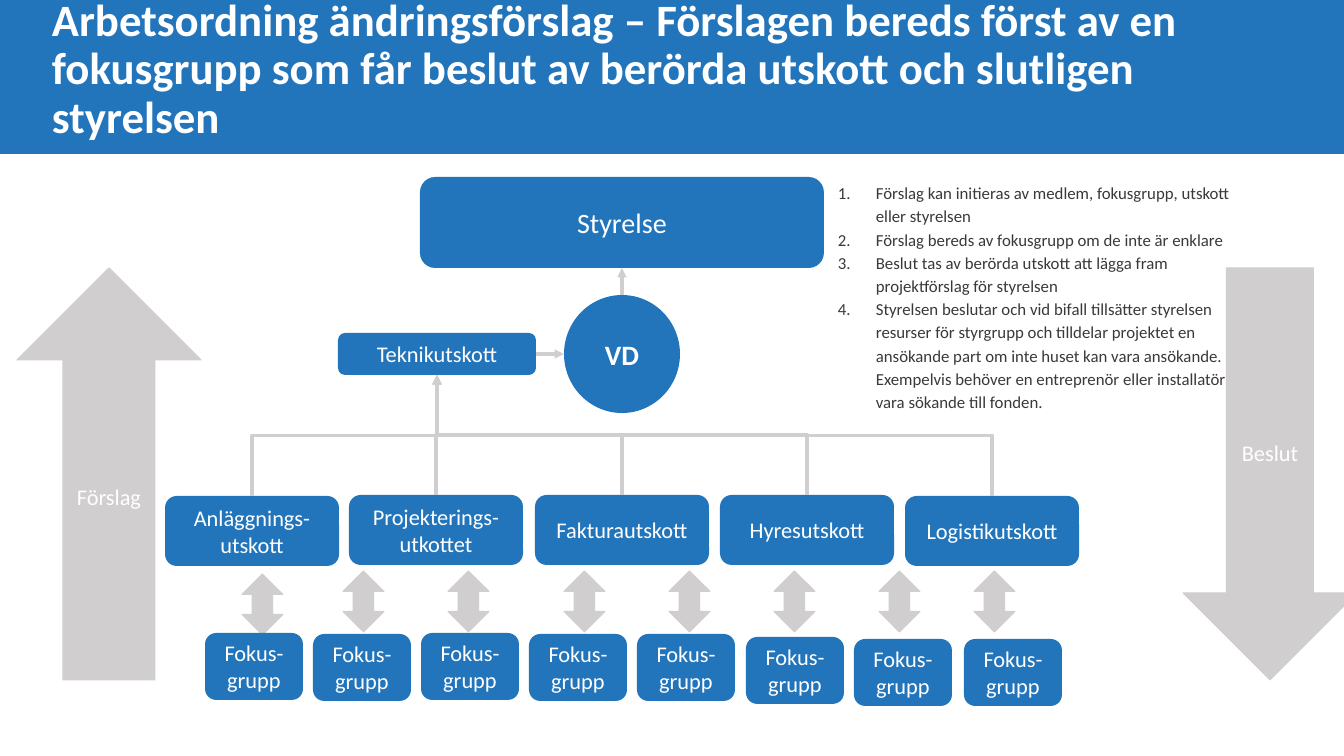
from lxml.etree import SubElement
from pptx import Presentation
from pptx.dml.color import RGBColor
from pptx.enum.shapes import MSO_CONNECTOR, MSO_SHAPE
from pptx.enum.text import MSO_ANCHOR, MSO_AUTO_SIZE, PP_ALIGN
from pptx.oxml.ns import qn
from pptx.util import Pt

EMU_PER_PX = 12192000 / 1344
BLUE = RGBColor(0x23, 0x75, 0xBB)
GREY = RGBColor(0xD0, 0xCE, 0xCE)
DARK = RGBColor(0x3B, 0x38, 0x38)
WHITE = RGBColor(0xFF, 0xFF, 0xFF)
FONT = "Calibri"

TITLE = ("Arbetsordning ändringsförslag – Förslagen bereds först av en "
         "fokusgrupp som får beslut av berörda utskott och slutligen styrelsen")
STEPS = [
    "Förslag kan initieras av medlem, fokusgrupp, utskott eller styrelsen",
    "Förslag bereds av fokusgrupp om de inte är enklare",
    "Beslut tas av berörda utskott att lägga fram projektförslag för styrelsen",
    "Styrelsen beslutar och vid bifall tillsätter styrelsen resurser för "
    "styrgrupp och tilldelar projektet en ansökande part om inte huset kan "
    "vara ansökande. Exempelvis behöver en entreprenör eller installatör "
    "vara sökande till fonden.",
]
COMMITTEES = [
    ("Anläggnings-utskott", 165, 496),
    ("Projekterings-utkottet", 349, 495),
    ("Fakturautskott", 535, 495),
    ("Hyresutskott", 720, 495),
    ("Logistikutskott", 905, 496),
]
FOCUS_GROUPS = [(205, 633), (313, 634), (421, 633), (529, 634),
                (637, 634), (746, 637), (854, 639), (964, 639)]
EXCHANGES = [(242, 574), (343, 571), (448, 571), (564, 571),
             (669, 571), (774, 571), (879, 571), (974, 571)]


def px(n):
    return round(n * EMU_PER_PX)


def style_runs(p, size, color, bold=False):
    for r in p.runs:
        r.font.name = FONT
        r.font.size = Pt(size)
        r.font.bold = bold
        r.font.color.rgb = color


def add_block(s, kind, x, y, w, h, fill, text="", size=16, bold=False):
    sp = s.shapes.add_shape(kind, px(x), px(y), px(w), px(h))
    sp.shadow.inherit = False
    sp.fill.solid()
    sp.fill.fore_color.rgb = fill
    if fill == GREY:
        sp.line.color.rgb = GREY
        sp.line.width = Pt(0.75)
    else:
        sp.line.fill.background()
    if text:
        tf = sp.text_frame
        tf.word_wrap = True
        tf.vertical_anchor = MSO_ANCHOR.MIDDLE
        tf.margin_left = tf.margin_right = px(13)
        tf.margin_top = tf.margin_bottom = px(13)
        p = tf.paragraphs[0]
        p.text = text
        p.alignment = PP_ALIGN.CENTER
        style_runs(p, size, WHITE, bold)
    return sp


def add_box(s, text, x, y, w, h, size=16):
    return add_block(s, MSO_SHAPE.ROUNDED_RECTANGLE, x, y, w, h, BLUE, text, size)


def add_arrow(s, kind, x1, y1, x2, y2):
    cxn = s.shapes.add_connector(kind, x1, y1, x2, y2)
    cxn.line.color.rgb = GREY
    cxn.line.width = Pt(2.25)
    SubElement(cxn.line._get_or_add_ln(), qn("a:tailEnd"), type="triangle")
    SubElement(cxn._element.spPr, qn("a:effectLst"))
    return cxn


def add_upward_elbow(s, lower, upper):
    x1, y1 = lower.left + lower.width // 2, lower.top
    x2, y2 = upper.left + upper.width // 2, upper.top + upper.height
    cxn = add_arrow(s, MSO_CONNECTOR.ELBOW, x1, y1, x2, y2)
    cxn.begin_connect(lower, 0)
    cxn.end_connect(upper, 2)
    rise, run = y1 - y2, abs(x2 - x1)
    xfrm = cxn._element.spPr.find(qn("a:xfrm"))
    xfrm.set("rot", "16200000")
    xfrm.set("flipH", "0")
    xfrm.set("flipV", "1" if x2 < x1 else "0")
    cxn.left, cxn.top = (x1 + x2 - rise) // 2, (y1 + y2 - run) // 2
    cxn.width, cxn.height = rise, run


def add_title(s):
    add_block(s, MSO_SHAPE.RECTANGLE, 0, 0, 1344, 154, BLUE)
    title = s.shapes.title
    s.shapes._spTree.append(title._element)
    title.left, title.top = px(42), px(22)
    title.width, title.height = px(1238), px(121)
    tf = title.text_frame
    tf.word_wrap = True
    tf.auto_size = MSO_AUTO_SIZE.NONE
    tf.vertical_anchor = MSO_ANCHOR.BOTTOM
    tf.margin_left = tf.margin_right = px(10)
    tf.margin_top, tf.margin_bottom = px(5), 0
    tf.text = TITLE
    p = tf.paragraphs[0]
    p.alignment = PP_ALIGN.LEFT
    p.line_spacing = 0.9
    style_runs(p, 32, WHITE, True)


def add_steps(s):
    tf = s.shapes.add_textbox(px(828), px(175), px(422), px(243)).text_frame
    tf.word_wrap = True
    for i, step in enumerate(STEPS):
        p = tf.add_paragraph() if i else tf.paragraphs[0]
        p.text = step
        p.line_spacing = 1.15
        p.space_after = Pt(10 if i == len(STEPS) - 1 else 0)
        pPr = p._p.get_or_add_pPr()
        pPr.set("marL", str(px(38)))
        pPr.set("indent", str(-px(38)))
        SubElement(pPr, qn("a:buFont"), typeface="+mj-lt")
        SubElement(pPr, qn("a:buAutoNum"), type="arabicPeriod")
        style_runs(p, 12, DARK)


def add_organisation(s):
    board = add_box(s, "Styrelse", 420, 177, 404, 91, 20)
    technical = add_box(s, "Teknikutskott", 338, 333, 198, 42)
    ceo = add_block(s, MSO_SHAPE.OVAL, 564, 295, 116, 118, BLUE, "VD", 20, True)
    committees = [add_box(s, text, x, y, 174, 70) for text, x, y in COMMITTEES]
    for x, y in EXCHANGES:
        add_block(s, MSO_SHAPE.UP_DOWN_ARROW, x, y, 41, 61, GREY)
    for committee in committees:
        add_upward_elbow(s, committee, technical)
    for x, y in FOCUS_GROUPS:
        add_box(s, "Fokus-grupp", x, y, 98, 67)
    to_ceo = add_arrow(s, MSO_CONNECTOR.STRAIGHT, px(536), px(354), px(564), px(354))
    to_ceo.begin_connect(technical, 3)
    to_board = add_arrow(s, MSO_CONNECTOR.STRAIGHT, px(622), px(295), px(622), px(268))
    to_board.begin_connect(ceo, 0)
    to_board.end_connect(board, 2)


def main():
    prs = Presentation()
    prs.slide_width, prs.slide_height = px(1344), px(756)
    s = prs.slides.add_slide(prs.slide_layouts[5])
    add_title(s)
    add_block(s, MSO_SHAPE.UP_ARROW, 17, 268, 184, 412, GREY, "Förslag")
    add_block(s, MSO_SHAPE.DOWN_ARROW, 1183, 268, 174, 412, GREY, "Beslut")
    add_organisation(s)
    add_steps(s)
    prs.save("out.pptx")


if __name__ == "__main__":
    main()
